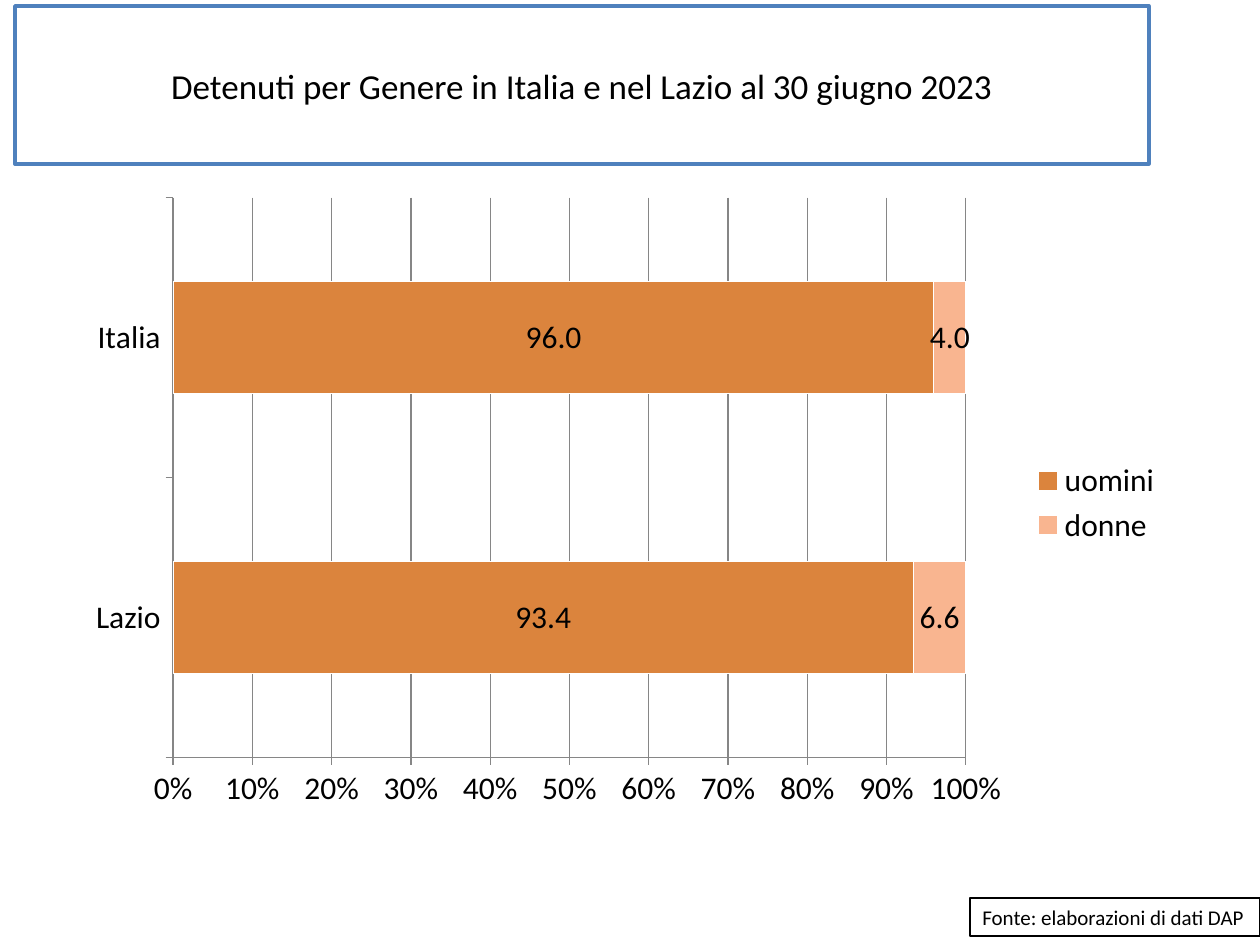
from dataclasses import dataclass

from lxml import etree
from pptx import Presentation
from pptx.chart.data import CategoryChartData
from pptx.dml.color import RGBColor
from pptx.enum.chart import XL_CHART_TYPE, XL_LABEL_POSITION, XL_LEGEND_POSITION, XL_TICK_MARK
from pptx.enum.shapes import MSO_SHAPE
from pptx.enum.text import MSO_ANCHOR, PP_ALIGN
from pptx.oxml.ns import qn
from pptx.util import Emu, Pt

RECT = MSO_SHAPE.RECTANGLE
BAR_STACKED_100 = XL_CHART_TYPE.BAR_STACKED_100
LABEL_CENTER = XL_LABEL_POSITION.CENTER
LEGEND_RIGHT = XL_LEGEND_POSITION.RIGHT
TICK_OUT = XL_TICK_MARK.OUTSIDE
MIDDLE = MSO_ANCHOR.MIDDLE
LEFT, CENTER = PP_ALIGN.LEFT, PP_ALIGN.CENTER

PX_PER_INCH = 126


@dataclass(frozen=True)
class Theme:
    font: str = "Calibri"
    text: str = "000000"
    paper: str = "FFFFFF"
    frame: str = "4F81BD"
    grid: str = "868686"
    series: tuple = ("DB843D", "F9B590")
    title_size: int = 20
    chart_size: int = 18
    source_size: int = 12


def px(n):
    return Emu(round(n * 914400 / PX_PER_INCH))


def rgb(value):
    return RGBColor.from_string(value)


def set_font(font, name, size, color):
    font.name = name
    font.size = Pt(size)
    font.color.rgb = rgb(color)


def write(tf, text, *, font, size, color, align=LEFT, wrap=True):
    tf.word_wrap = wrap
    tf.vertical_anchor = MIDDLE
    p = tf.paragraphs[0]
    p.alignment = align
    r = p.add_run()
    r.text = text
    set_font(r.font, font, size, color)


class SlideBuilder:
    def __init__(self, slide, theme):
        self.s = slide
        self.theme = theme

    def box(self, text, x, y, w, h, *, line, weight, size, **fmt):
        sp = self.s.shapes.add_shape(RECT, px(x), px(y), px(w), px(h))
        sp.shadow.inherit = False
        sp.fill.solid()
        sp.fill.fore_color.rgb = rgb(self.theme.paper)
        sp.line.color.rgb = rgb(line)
        sp.line.width = Pt(weight)
        write(sp.text_frame, text, font=self.theme.font, size=size,
              color=self.theme.text, **fmt)

    def bar_chart(self, categories, series, x, y, w, h, plot):
        t = self.theme
        data = CategoryChartData(number_format="0.0")
        data.categories = categories
        for name, values in series:
            data.add_series(name, values)
        chart = self.s.shapes.add_chart(
            BAR_STACKED_100, px(x), px(y), px(w), px(h), data).chart
        set_font(chart.font, t.font, t.chart_size, t.text)
        chart.has_title = False
        chart.has_legend = True
        chart.legend.position = LEGEND_RIGHT
        chart.legend.include_in_layout = False

        # Axes
        for axis in (chart.category_axis, chart.value_axis):
            axis.major_tick_mark = TICK_OUT
            axis.format.line.color.rgb = rgb(t.grid)
        axis = chart.value_axis
        axis.minimum_scale = 0
        axis.has_major_gridlines = True
        axis.major_gridlines.format.line.color.rgb = rgb(t.grid)
        axis.tick_labels.number_format = "0%"
        axis.tick_labels.number_format_is_linked = False

        # Bars and their values
        bars = chart.plots[0]
        bars.vary_by_categories = False
        bars.gap_width = 150
        bars.overlap = 100
        for ser, color in zip(bars.series, t.series):
            ser.invert_if_negative = False
            ser.format.fill.solid()
            ser.format.fill.fore_color.rgb = rgb(color)
            ser.format.line.color.rgb = rgb(t.paper)
            labels = ser.data_labels
            labels.show_value = True
            labels.position = LABEL_CENTER
            labels.number_format = "0.0"
            labels.number_format_is_linked = False
            set_font(labels.font, t.font, t.chart_size, t.text)
        self.place_plot(chart, plot)

    def place_plot(self, chart, plot):
        """Fix the inner plot area, given as fractions of the chart."""
        area = chart.plots[0]._element.getparent()
        for old in area.findall(qn("c:layout")):
            area.remove(old)
        layout = etree.Element(qn("c:layout"))
        area.insert(0, layout)
        manual = etree.SubElement(layout, qn("c:manualLayout"))
        settings = [("layoutTarget", "inner"), ("xMode", "edge"), ("yMode", "edge")]
        for tag, value in settings + list(zip("xywh", plot)):
            etree.SubElement(manual, qn(f"c:{tag}")).set("val", str(value))


def main():
    prs = Presentation()
    prs.slide_width, prs.slide_height = px(1260), px(945)
    theme = Theme()
    b = SlideBuilder(prs.slides.add_slide(prs.slide_layouts[6]), theme)

    # Title
    b.box("Detenuti per Genere in Italia e nel Lazio al 30 giugno 2023",
          15, 6, 1134, 158, line=theme.frame, weight=2,
          size=theme.title_size, align=CENTER)

    # Source note
    b.box("Fonte: elaborazioni di dati DAP", 970, 898, 290, 38,
          line=theme.text, weight=0.75, size=theme.source_size, wrap=False)

    # Share of men and women
    b.bar_chart(["Lazio", "Italia"],
                [("uomini", (93.4, 96)), ("donne", (6.6, 4))],
                74, 185, 1101, 636, plot=(0.09, 0.02, 0.72, 0.88))

    prs.save("out.pptx")


if __name__ == "__main__":
    main()
